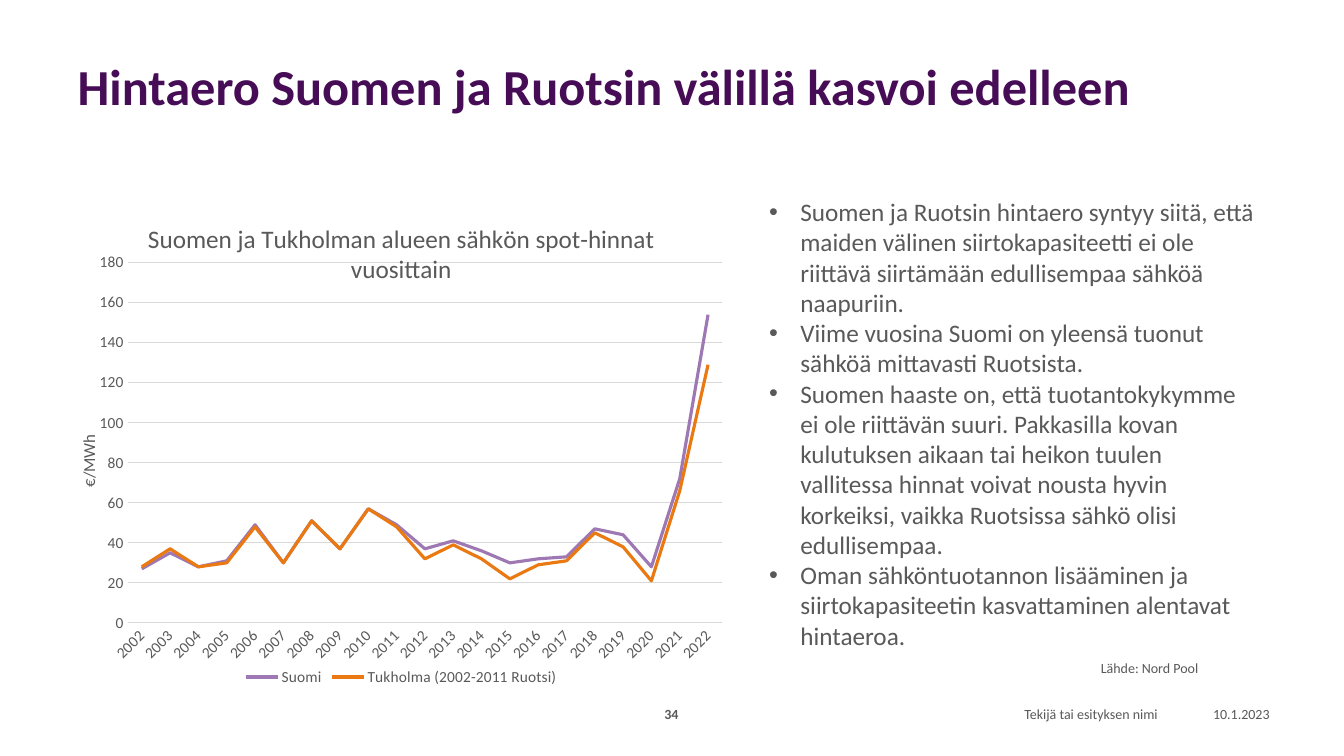
from dataclasses import dataclass

from lxml.etree import SubElement
from pptx import Presentation
from pptx.chart.data import CategoryChartData
from pptx.dml.color import RGBColor
from pptx.enum.chart import XL_CHART_TYPE as ChartType
from pptx.enum.chart import XL_LEGEND_POSITION as LegendPosition
from pptx.enum.chart import XL_TICK_MARK as TickMark
from pptx.enum.text import MSO_ANCHOR as Anchor
from pptx.enum.text import PP_ALIGN as Align
from pptx.oxml.ns import qn
from pptx.util import Inches, Pt


@dataclass(frozen=True)
class Theme:
    font: str = "Calibri"
    title: str = "460D56"
    text: str = "595959"
    grid: str = "D9D9D9"
    finland: str = "9E78B2"
    stockholm: str = "EA7911"
    title_size: int = 36
    body_size: int = 18
    axis_title_size: int = 12
    chart_size: int = 11
    small_size: int = 10


THEME = Theme()

TITLE = "Hintaero Suomen ja Ruotsin välillä kasvoi edelleen"
POINTS = [
    "Suomen ja Ruotsin hintaero syntyy siitä, että maiden välinen siirtokapasiteetti "
    "ei ole riittävä siirtämään edullisempaa sähköä naapuriin.",
    "Viime vuosina Suomi on yleensä tuonut sähköä mittavasti Ruotsista.",
    "Suomen haaste on, että tuotantokykymme ei ole riittävän suuri. Pakkasilla kovan "
    "kulutuksen aikaan tai heikon tuulen vallitessa hinnat voivat nousta hyvin "
    "korkeiksi, vaikka Ruotsissa sähkö olisi edullisempaa.",
    "Oman sähköntuotannon lisääminen ja siirtokapasiteetin kasvattaminen alentavat hintaeroa.",
]
CHART_TITLE = "Suomen ja Tukholman alueen sähkön spot-hinnat vuosittain"
YEARS = [str(year) for year in range(2002, 2023)]
PRICES = [
    ("Suomi", THEME.finland,
     [27, 35, 28, 31, 49, 30, 51, 37, 57, 49, 37, 41, 36, 30, 32, 33, 47, 44, 28, 72, 154]),
    ("Tukholma (2002-2011 Ruotsi)", THEME.stockholm,
     [28, 37, 28, 30, 48, 30, 51, 37, 57, 48, 32, 39, 32, 22, 29, 31, 45, 38, 21, 66, 129]),
]


def style_font(font, size, color=THEME.text, bold=False):
    values = {"name": THEME.font, "size": Pt(size), "bold": bold}
    for name, value in values.items():
        setattr(font, name, value)
    font.color.rgb = RGBColor.from_string(color)


def style_line(line, color, width):
    line.color.rgb = RGBColor.from_string(color)
    line.width = Pt(width)


def add_label(page, box, text, align=Align.LEFT, anchor=Anchor.MIDDLE, bold=False):
    frame = page.shapes.add_textbox(*map(Inches, box)).text_frame
    frame.word_wrap = True
    frame.vertical_anchor = anchor
    para = frame.paragraphs[0]
    para.text = text
    para.alignment = align
    style_font(para.font, THEME.small_size, bold=bold)


def add_title(page, box):
    title = page.shapes.title
    for name, value in zip(("left", "top", "width", "height"), box):
        setattr(title, name, Inches(value))
    title.text_frame.vertical_anchor = Anchor.MIDDLE
    title.text_frame.word_wrap = True
    para = title.text_frame.paragraphs[0]
    para.text = TITLE
    para.alignment = Align.LEFT
    para.line_spacing = 0.9
    style_font(para.font, THEME.title_size, THEME.title, bold=True)


def add_points(page, box):
    frame = page.shapes.add_textbox(*map(Inches, box)).text_frame
    frame.word_wrap = True
    for index, point in enumerate(POINTS):
        para = frame.add_paragraph() if index else frame.paragraphs[0]
        para.text = point
        properties = para._p.get_or_add_pPr()
        properties.set("marL", str(Inches(0.31)))
        properties.set("indent", str(-Inches(0.31)))
        SubElement(properties, qn("a:buFont"), typeface="Arial")
        SubElement(properties, qn("a:buChar"), char="•")
        style_font(para.font, THEME.body_size)


def set_layout(parent, position, **values):
    layout = parent.find(qn("c:layout"))
    if layout is None:
        layout = parent.makeelement(qn("c:layout"))
        parent.insert(position, layout)
    manual = SubElement(layout, qn("c:manualLayout"))
    for name, value in values.items():
        SubElement(manual, qn(f"c:{name}"), val=str(value))


def set_title(owner, text, size):
    owner.has_title = True
    title = owner.chart_title if hasattr(owner, "chart_title") else owner.axis_title
    para = title.text_frame.paragraphs[0]
    para.text = text
    style_font(para.font, size)


def add_price_chart(page, box):
    data = CategoryChartData(number_format="0")
    data.categories = YEARS
    for name, _, values in PRICES:
        data.add_series(name, values)
    chart = page.shapes.add_chart(ChartType.LINE, *map(Inches, box), data).chart
    style_font(chart.font, THEME.chart_size)
    set_title(chart, CHART_TITLE, THEME.body_size)

    plot = chart.plots[0]
    plot.vary_by_categories = False
    for series, (_, color, _) in zip(plot.series, PRICES):
        series.smooth = False
        style_line(series.format.line, color, 2.25)

    years, prices = chart.category_axis, chart.value_axis
    for axis in (years, prices):
        axis.major_tick_mark = axis.minor_tick_mark = TickMark.NONE
        style_font(axis.tick_labels.font, THEME.chart_size)
    style_line(years.format.line, THEME.grid, 0.75)
    for name, value in {"minimum_scale": 0, "maximum_scale": 180, "major_unit": 20}.items():
        setattr(prices, name, value)
    prices.format.line.fill.background()
    style_line(prices.major_gridlines.format.line, THEME.grid, 0.75)
    set_title(prices, "€/MWh", THEME.axis_title_size)

    chart.has_legend = True
    chart.legend.position = LegendPosition.BOTTOM
    chart.legend.include_in_layout = False
    style_font(chart.legend.font, THEME.chart_size)

    root = chart._chartSpace
    root.xpath(".//c:catAx/c:txPr/a:bodyPr")[0].set("rot", "-2700000")
    set_layout(root.xpath(".//c:plotArea")[0], 0, layoutTarget="inner",
               xMode="edge", yMode="edge", x=0.09, y=0.125, w=0.891, h=0.737)
    set_layout(root.xpath(".//c:valAx/c:title")[0], 1,
               xMode="edge", yMode="edge", x=0.01, y=0.47)


def add_footer(page, top):
    add_label(page, (6.36, top, 0.6, 0.27), "34", Align.CENTER, bold=True)
    add_label(page, (7.41, top, 4.17, 0.27), "Tekijä tai esityksen nimi", Align.RIGHT)
    add_label(page, (11.58, top, 1.11, 0.27), "10.1.2023", Align.RIGHT)


def main():
    deck = Presentation()
    deck.slide_width, deck.slide_height = Inches(13.33), Inches(7.5)
    page = deck.slides.add_slide(deck.slide_layouts[5])
    add_title(page, (0.67, 0.4, 11.37, 0.98))
    add_footer(page, 6.95)
    add_label(page, (10.82, 6.49, 1.52, 0.27), "Lähde: Nord Pool", anchor=Anchor.TOP)
    add_price_chart(page, (0.67, 2, 6.62, 4.85))
    add_points(page, (7.53, 1.9, 5.05, 4.64))
    deck.save("out.pptx")


if __name__ == "__main__":
    main()
